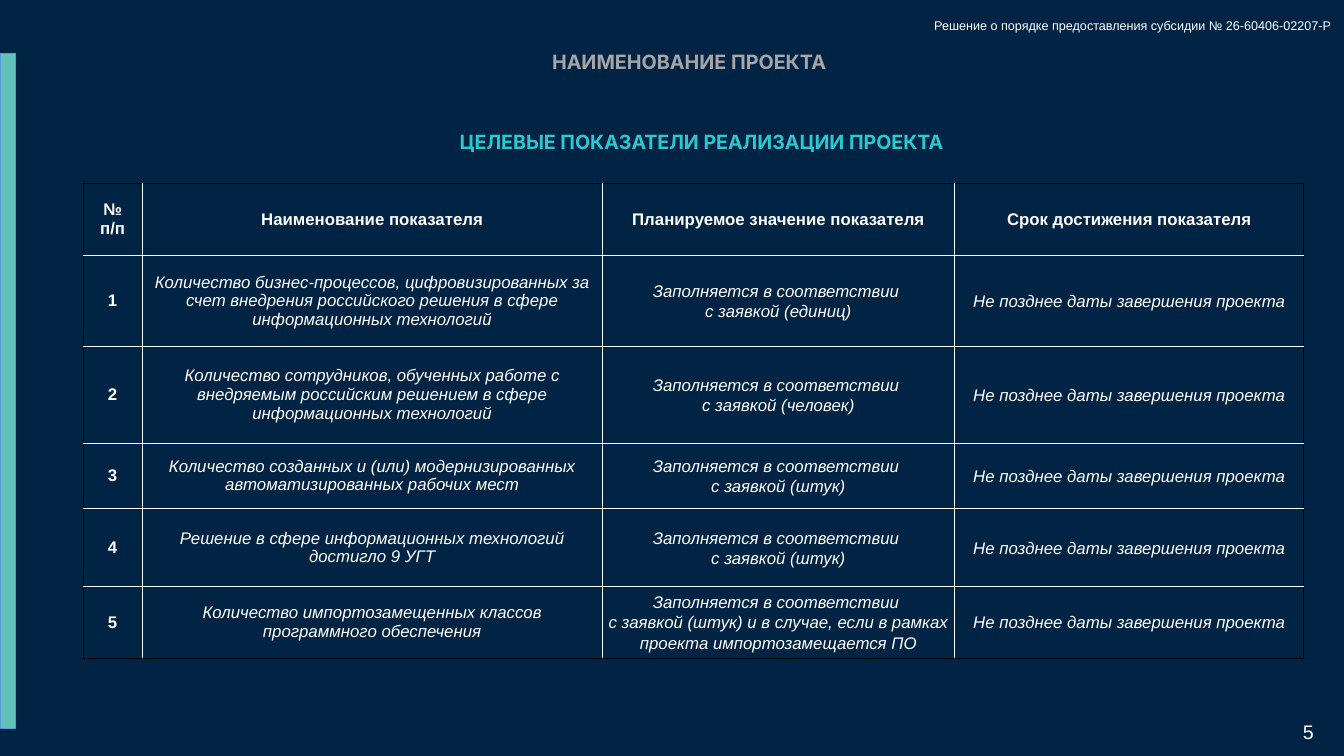
import pptx
import pptx.dml.color
import pptx.enum.shapes
import pptx.enum.text
import pptx.oxml.ns
import pptx.util
from lxml import etree

COLORS = {
    "night": "012344", "mint": "62C3BB", "blue": "5B9BD5", "teal": "2FC7CF",
    "grey": "A6A6A6", "white": "FFFFFF", "black": "000000",
}
SLIDE_WIDTH, SLIDE_HEIGHT = pptx.util.Inches(26.67), pptx.util.Inches(15)
ALIGN = pptx.enum.text.PP_ALIGN
MIDDLE = pptx.enum.text.MSO_ANCHOR.MIDDLE

# Relative sizes of the table grid
COLUMN_WEIGHTS = [1.17, 9.13, 7, 6.93]
ROW_WEIGHTS = [1.44, 1.81, 1.91, 1.3, 1.55, 1.42]

HEADERS = ["№ п/п", "Наименование показателя",
           "Планируемое значение показателя", "Срок достижения показателя"]
INDICATORS = [
    ("Количество бизнес-процессов, цифровизированных за счет внедрения "
     "российского решения в сфере информационных технологий", "(единиц)"),
    ("Количество сотрудников, обученных работе с внедряемым российским "
     "решением в сфере информационных технологий", "(человек)"),
    ("Количество созданных и (или) модернизированных автоматизированных "
     "рабочих мест", "(штук)"),
    ("Решение в сфере информационных технологий достигло 9 УГТ", "(штук)"),
    ("Количество импортозамещенных классов программного обеспечения",
     "(штук) и в случае, если в рамках проекта импортозамещается ПО"),
]
PLAN = "Заполняется в соответствии \vс заявкой "
DEADLINE = "Не позднее даты завершения проекта"


def rgb(name):
    return pptx.dml.color.RGBColor.from_string(COLORS[name])


def share_box(left, top, width, height):
    """Turn percentages of the slide into a box of lengths."""
    return (int(SLIDE_WIDTH * left / 100), int(SLIDE_HEIGHT * top / 100),
            int(SLIDE_WIDTH * width / 100), int(SLIDE_HEIGHT * height / 100))


def style_paragraph(paragraph, size, color="white", name="Arial",
                    align=ALIGN.CENTER, bold=False, italic=False):
    paragraph.alignment = align
    font = paragraph.font
    font.name, font.size = name, pptx.util.Pt(size)
    font.bold, font.italic = bold, italic
    font.color.rgb = rgb(color)


def add_side_bar(slide, box):
    bar = slide.shapes.add_shape(pptx.enum.shapes.MSO_SHAPE.RECTANGLE, *box)
    bar.shadow.inherit = False
    bar.fill.solid()
    bar.fill.fore_color.rgb = rgb("mint")
    bar.line.color.rgb = rgb("blue")
    bar.line.width = pptx.util.Pt(0.25)


def add_label(slide, box, text, inset=None, wrap=True, anchor=None, **style):
    frame = slide.shapes.add_textbox(*box).text_frame
    frame.word_wrap = wrap
    if anchor is not None:
        frame.vertical_anchor = anchor
    if inset is not None:
        frame.margin_left = frame.margin_right = pptx.util.Inches(inset)
        frame.margin_top = frame.margin_bottom = pptx.util.Inches(inset)
    frame.text = text
    style_paragraph(frame.paragraphs[0], **style)


def set_borders(cell, edges):
    properties = cell._tc.get_or_add_tcPr()
    for side, color in edges.items():
        line = etree.SubElement(properties, pptx.oxml.ns.qn(f"a:ln{side}"),
                                w=str(pptx.util.Pt(1)))
        fill = etree.SubElement(line, pptx.oxml.ns.qn("a:solidFill"))
        etree.SubElement(fill, pptx.oxml.ns.qn("a:srgbClr"), val=COLORS[color])


def fill_cell(cell, text, row, column):
    # Black on the outer frame, white between cells
    last_row, last_column = len(ROW_WEIGHTS) - 1, len(COLUMN_WEIGHTS) - 1
    outer = {"L": column == 0, "R": column == last_column,
             "T": row == 0, "B": row == last_row}
    set_borders(cell, {side: "black" if edge else "white"
                       for side, edge in outer.items()})
    cell.fill.solid()
    cell.fill.fore_color.rgb = rgb("night")

    is_header, is_number = row == 0, column == 0
    side = 0.14 if is_header else (0.14, 0.18, 0.04, 0.04)[column]
    edge = 0.14 if is_number and not is_header else 0.07
    cell.margin_left = cell.margin_right = pptx.util.Inches(side)
    cell.margin_top = cell.margin_bottom = pptx.util.Inches(edge)
    cell.vertical_anchor = MIDDLE
    cell.text = text
    paragraph = cell.text_frame.paragraphs[0]
    if column >= 2 and not is_header:
        paragraph.line_spacing = 1.07
    strong = is_header or is_number
    style_paragraph(paragraph, 24, bold=strong, italic=not strong)


def add_indicator_table(slide, box):
    rows = [HEADERS] + [
        [str(number), name, PLAN + unit, DEADLINE]
        for number, (name, unit) in enumerate(INDICATORS, start=1)]
    table = slide.shapes.add_table(len(rows), len(HEADERS), *box).table
    table.first_row = table.horz_banding = False
    for column, weight in zip(table.columns, COLUMN_WEIGHTS):
        column.width = int(box[2] * weight / sum(COLUMN_WEIGHTS))
    for row, weight in zip(table.rows, ROW_WEIGHTS):
        row.height = int(box[3] * weight / sum(ROW_WEIGHTS))
    for row, texts in enumerate(rows):
        for column, text in enumerate(texts):
            fill_cell(table.cell(row, column), text, row, column)


def main():
    presentation = pptx.Presentation()
    presentation.slide_width = SLIDE_WIDTH
    presentation.slide_height = SLIDE_HEIGHT
    slide = presentation.slides.add_slide(presentation.slide_layouts[6])
    slide.background.fill.solid()
    slide.background.fill.fore_color.rgb = rgb("night")

    add_side_bar(slide, share_box(0, 7.07, 1.16, 89.2))
    # Page number
    add_label(slide, share_box(95.2, 94.8, 3.04, 4.07), "5", inset=0.13,
              anchor=MIDDLE, size=28, align=ALIGN.RIGHT)
    # Section heading
    add_label(slide, share_box(27.56, 16.53, 49.27, 4.47),
              "ЦЕЛЕВЫЕ ПОКАЗАТЕЛИ РЕАЛИЗАЦИИ ПРОЕКТА", inset=0.1,
              size=28, color="teal", name="Inter", bold=True)
    add_indicator_table(slide, share_box(6.19, 24.2, 90.81, 62.87))
    # Project name
    add_label(slide, share_box(7.2, 6.27, 88.15, 3.87), "НАИМЕНОВАНИЕ ПРОЕКТА",
              size=28.2, color="grey", name="Inter", bold=True)
    # Decision reference
    add_label(slide, share_box(69.14, 2, 30.82, 2.67),
              "Решение о порядке предоставления субсидии № 26-60406-02207-Р",
              wrap=False, size=18, align=ALIGN.LEFT)
    presentation.save("out.pptx")


if __name__ == "__main__":
    main()
